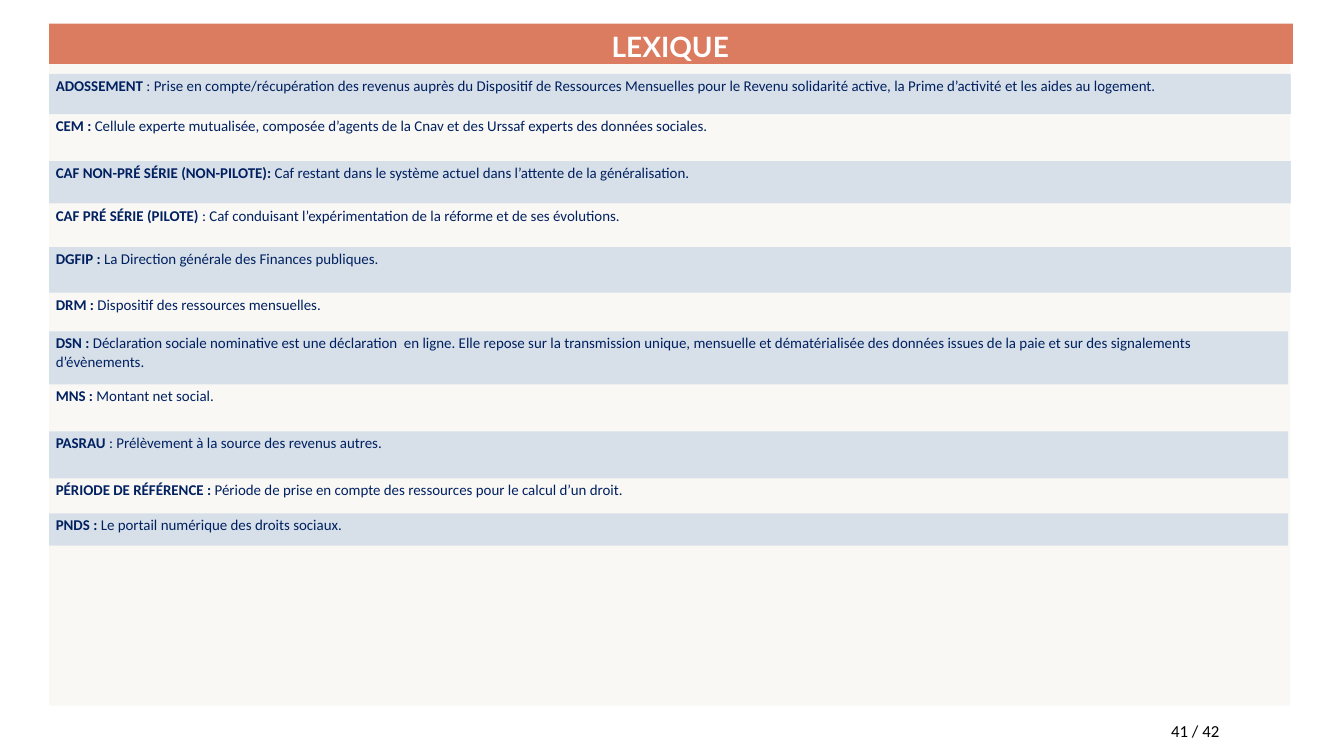
"""Build the glossary slide: title band, striped definition tables and page number."""
from dataclasses import dataclass

from lxml import etree
from pptx import Presentation
from pptx.dml.color import RGBColor
from pptx.enum.shapes import MSO_SHAPE
from pptx.enum.text import MSO_AUTO_SIZE, PP_ALIGN
from pptx.oxml.ns import qn
from pptx.util import Emu, Inches, Pt

RECTANGLE = MSO_SHAPE.RECTANGLE
GROW = MSO_AUTO_SIZE.SHAPE_TO_FIT_TEXT
LEFT, CENTER = PP_ALIGN.LEFT, PP_ALIGN.CENTER
WIDTH, HEIGHT = Inches(20), Inches(11.25)
COL, ROW = WIDTH / 100, HEIGHT / 100
CREAM, CORAL, NAVY, BLUE = "FAF8F5", "DB7B5F", "002060", "4F81BD"
NO_GRID_STYLE = "{2D5ABB26-0587-4C30-8999-92F81FD0307C}"


@dataclass(frozen=True)
class Box:
    """Place on a grid of 100 columns by 100 rows."""
    left: float
    top: float
    width: float
    height: float

    def emu(self) -> tuple:
        """Return left, top, width and height as slide lengths."""
        return (Emu(round(self.left * COL)), Emu(round(self.top * ROW)),
                Emu(round(self.width * COL)), Emu(round(self.height * ROW)))


@dataclass(frozen=True)
class Entry:
    """Glossary row: term, definition and height in grid rows."""
    term: str
    meaning: str
    height: float


PANELS = [
    (Box(3.65, 6.22, 92.35, 87.11), CREAM),
    (Box(3.65, 4.44, 92.55, 3.91), CORAL),
    (Box(3.65, 3.11, 92.55, 5.33), CORAL),
]
FIRST_ENTRIES = [
    Entry("ADOSSEMENT ", ": Prise en compte/récupération des revenus auprès du Dispositif de "
          "Ressources Mensuelles pour le Revenu solidarité active, la Prime d’activité et les "
          "aides au logement.", 5.33),
    Entry("CEM : ", "Cellule experte mutualisée, composée d’agents de la Cnav et des Urssaf "
          "experts des données sociales.", 6.2),
    Entry("CAF NON-PRÉ SÉRIE (NON-PILOTE): ", "Caf restant dans le système actuel dans "
          "l’attente de la généralisation.", 5.6),
    Entry("CAF PRÉ SÉRIE (PILOTE) ", ": Caf conduisant l’expérimentation de la réforme et de "
          "ses évolutions.", 5.78),
    Entry("DGFIP : ", "La Direction générale des Finances publiques.", 6.04),
    Entry("DRM : ", "Dispositif des ressources mensuelles.", 6.67),
]
LAST_ENTRIES = [
    Entry("DSN : ", "Déclaration sociale nominative est une déclaration  en ligne. Elle repose "
          "sur la transmission unique, mensuelle et dématérialisée des données issues de la "
          "paie et sur des signalements d’évènements.", 7.02),
    Entry("MNS : ", "Montant net social.", 6.22),
    Entry("PASRAU ", ": Prélèvement à la source des revenus autres.", 6.22),
    Entry("PÉRIODE DE RÉFÉRENCE : ", "Période de prise en compte des ressources pour le calcul "
          "d’un droit.", 4.62),
    Entry("PNDS : ", "Le portail numérique des droits sociaux.", 4.27),
]


def paint(fill, color: str, alpha: int = 100) -> None:
    """Give a fill a solid colour with an opacity in percent."""
    fill.solid()
    fill.fore_color.rgb = RGBColor.from_string(color)
    if alpha < 100:
        clr = fill._xPr.find(".//" + qn("a:srgbClr"))
        etree.SubElement(clr, qn("a:alpha")).set("val", str(alpha * 1000))


def add_run(p, text: str, *, size: float, color: str, font: str = "Calibri",
            bold: bool = False) -> None:
    """Append formatted text to a paragraph."""
    r = p.add_run()
    r.text = text
    r.font.size, r.font.name, r.font.bold = Pt(size), font, bold
    paint(r.font.fill, color)


def add_panel(s, box: Box, color: str) -> None:
    """Draw a plain rectangle without outline."""
    sp = s.shapes.add_shape(RECTANGLE, *box.emu())
    sp.shadow.inherit = False
    sp.line.fill.background()
    paint(sp.fill, color)


def add_label(s, box: Box, text: str, *, align=LEFT, spacing=None, inset=None,
              **style) -> None:
    """Place a one-paragraph text box."""
    tf = s.shapes.add_textbox(*box.emu()).text_frame
    tf.word_wrap, tf.auto_size = True, GROW
    if inset is not None:
        tf.margin_left = tf.margin_right = tf.margin_top = tf.margin_bottom = inset
    p = tf.paragraphs[0]
    p.alignment, p.line_spacing = align, spacing
    add_run(p, text, **style)


def add_glossary(s, top: float, width: float, entries: list[Entry]) -> None:
    """Draw a one-column table whose odd rows are tinted."""
    box = Box(3.65, top, width, sum(e.height for e in entries))
    table = s.shapes.add_table(len(entries), 1, *box.emu()).table
    table.first_row = table.horz_banding = False
    table._tbl.tblPr.find(qn("a:tableStyleId")).text = NO_GRID_STYLE
    for i, entry in enumerate(entries):
        table.rows[i].height = Emu(round(entry.height * ROW))
        cell = table.cell(i, 0)
        if i % 2:
            cell.fill.background()
        else:
            paint(cell.fill, BLUE, alpha=20)
        p = cell.text_frame.paragraphs[0]
        add_run(p, entry.term, size=16, color=NAVY, bold=True)
        add_run(p, entry.meaning, size=16, color=NAVY)


def main() -> None:
    """Assemble and save the slide."""
    prs = Presentation()
    prs.slide_width, prs.slide_height = WIDTH, HEIGHT
    s = prs.slides.add_slide(prs.slide_layouts[6])
    for box, color in PANELS:
        add_panel(s, box, color)
    add_label(s, Box(86.65, 94.93, 5.95, 3.73), "41 / 42", size=18, color="000000")
    add_label(s, Box(3.7, 3.11, 92.35, 4.89), "LEXIQUE", align=CENTER, spacing=Pt(42),
              inset=0, size=30, color="FFFFFF", font="Lato", bold=True)
    add_glossary(s, 9.78, 92.4, FIRST_ENTRIES)
    add_glossary(s, 43.82, 92.2, LAST_ENTRIES)
    prs.save("out.pptx")


if __name__ == "__main__":
    main()
